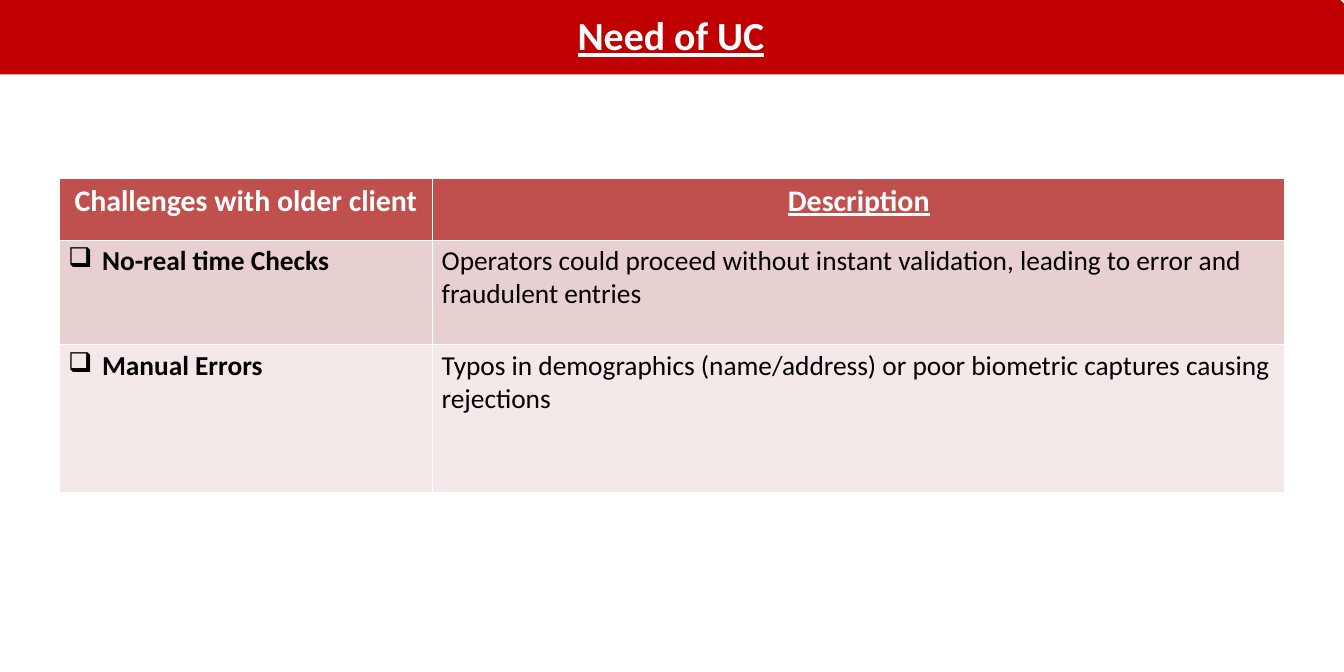
"""Build the "Need of UC" slide: a title banner above a table of challenges."""
from dataclasses import dataclass

from lxml import etree
from pptx import Presentation
from pptx.dml.color import RGBColor
from pptx.enum.shapes import MSO_SHAPE
from pptx.enum.text import MSO_ANCHOR, PP_ALIGN
from pptx.oxml.ns import qn
from pptx.util import Inches

from pptx.util import Pt

SNIPPED = MSO_SHAPE.SNIP_1_RECTANGLE
MIDDLE = MSO_ANCHOR.MIDDLE
CENTER, LEFT = PP_ALIGN.CENTER, PP_ALIGN.LEFT

TITLE = "Need of UC"
HEADERS = ["Challenges with older client", "Description"]
CHALLENGES = [
    ("No-real time Checks",
     "Operators could proceed without instant validation, leading to error and fraudulent entries"),
    ("Manual Errors",
     "Typos in demographics (name/address) or poor biometric captures causing rejections"),
]

SLIDE_WIDTH, SLIDE_HEIGHT = 15, 7.5
BANNER_HEIGHT = 0.83
TABLE_TOP = 1.99
COLUMNS = [4.17, 9.51]
ROWS = [0.69, 1.17, 1.65]
BULLET, BULLET_INDENT = "❑", 0.38


@dataclass(frozen=True)
class Theme:
    """Colours, font and type sizes."""
    banner: str = "C00000"
    header: str = "C0504D"
    bands: tuple = ("E8D0D0", "F4E9E9")
    light: str = "FFFFFF"
    dark: str = "000000"
    font: str = "Calibri"
    title_size: int = 32
    header_size: int = 24
    body_size: int = 22


THEME = Theme()


def paint(target, color):
    target.fill.solid()
    target.fill.fore_color.rgb = RGBColor.from_string(color)


def write(text_frame, text, size, color, align=LEFT, bold=False, underline=False):
    paragraph = text_frame.paragraphs[0]
    paragraph.alignment = align
    run = paragraph.add_run()
    run.text = text
    formats = {"name": THEME.font, "size": Pt(size), "bold": bold, "underline": underline}
    for name, value in formats.items():
        setattr(run.font, name, value)
    run.font.color.rgb = RGBColor.from_string(color)
    return paragraph


def add_bullet(paragraph):
    properties = paragraph._p.get_or_add_pPr()
    indent = Inches(BULLET_INDENT)
    properties.set("marL", str(indent))
    properties.set("indent", str(-indent))
    etree.SubElement(properties, qn("a:buChar")).set("char", BULLET)


def add_banner(slide):
    banner = slide.shapes.add_shape(SNIPPED, 0, 0, Inches(SLIDE_WIDTH), Inches(BANNER_HEIGHT))
    banner.adjustments[0] = 0.05
    banner.shadow.inherit = False
    banner.line.fill.background()
    paint(banner, THEME.banner)
    banner.text_frame.word_wrap = True
    banner.text_frame.vertical_anchor = MIDDLE
    paragraph = write(banner.text_frame, TITLE, THEME.title_size, THEME.light, CENTER, True, True)
    paragraph.line_spacing = 0.9


def add_challenges(slide):
    width, height = sum(COLUMNS), sum(ROWS)
    left = (SLIDE_WIDTH - width) / 2
    table = slide.shapes.add_table(len(ROWS), len(COLUMNS), Inches(left), Inches(TABLE_TOP),
                                   Inches(width), Inches(height)).table
    for column, column_width in zip(table.columns, COLUMNS):
        column.width = Inches(column_width)
    for row, row_height in zip(table.rows, ROWS):
        row.height = Inches(row_height)
    for index, header in enumerate(HEADERS):
        cell = table.cell(0, index)
        paint(cell, THEME.header)
        write(cell.text_frame, header, THEME.header_size, THEME.light, CENTER, True, index == 1)
    for row_index, (entries, band) in enumerate(zip(CHALLENGES, THEME.bands), start=1):
        for index, entry in enumerate(entries):
            cell = table.cell(row_index, index)
            paint(cell, band)
            is_challenge = index == 0
            paragraph = write(cell.text_frame, entry, THEME.body_size, THEME.dark, bold=is_challenge)
            if is_challenge:
                add_bullet(paragraph)


def main():
    presentation = Presentation()
    presentation.slide_width = Inches(SLIDE_WIDTH)
    presentation.slide_height = Inches(SLIDE_HEIGHT)
    slide = presentation.slides.add_slide(presentation.slide_layouts[6])
    add_banner(slide)
    add_challenges(slide)
    presentation.save("out.pptx")


if __name__ == "__main__":
    main()
